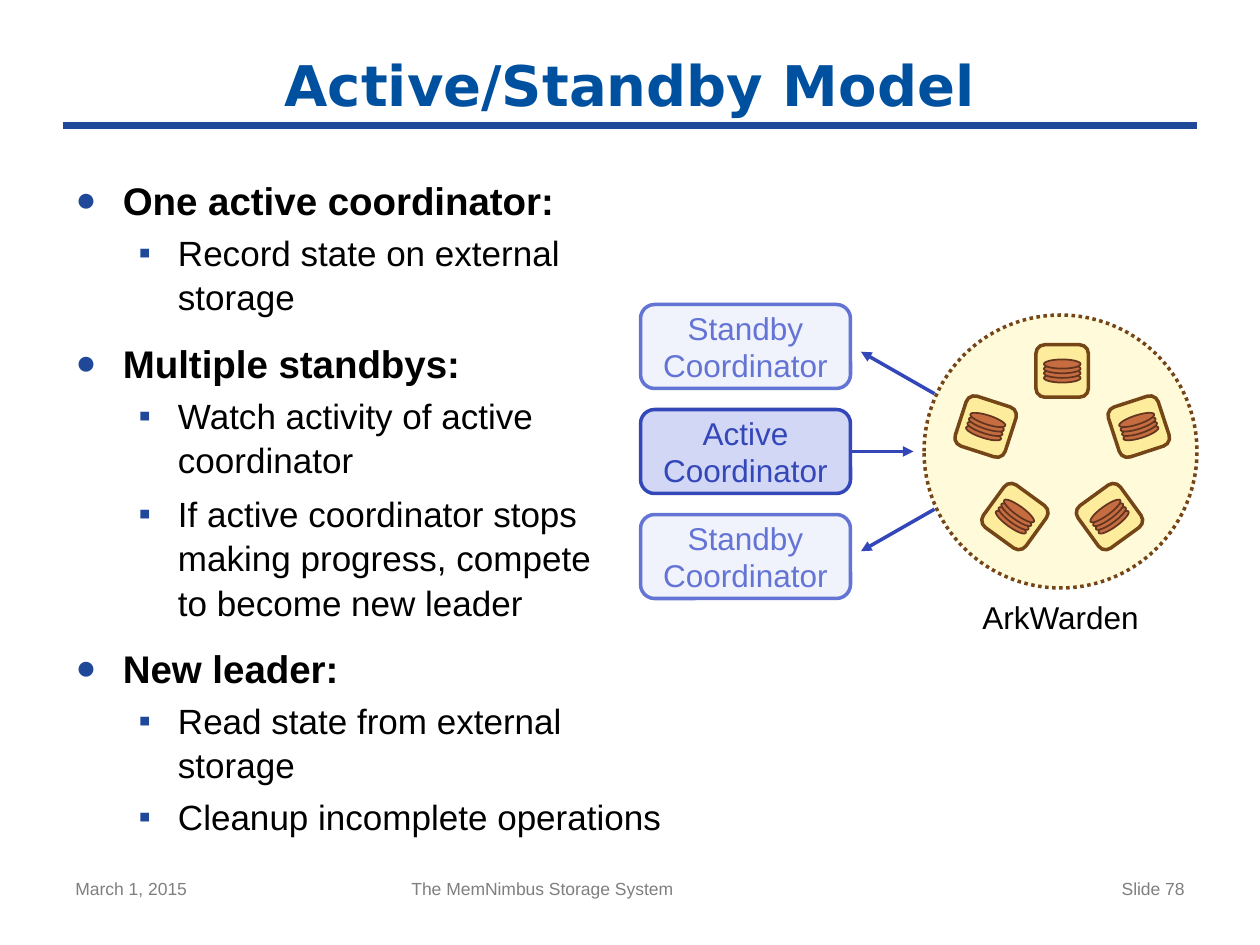
from math import cos, radians, sin

from lxml.etree import SubElement
from pptx import Presentation
from pptx.dml.color import RGBColor
from pptx.enum.dml import MSO_LINE
from pptx.enum.shapes import MSO_CONNECTOR, MSO_SHAPE
from pptx.enum.text import MSO_ANCHOR, MSO_AUTO_SIZE, PP_ALIGN
from pptx.oxml.ns import qn
from pptx.util import Pt

NAVY, BLUE, BROWN = "1F4899", "3447B8", "744516"
STANDBY = ("Standby", "F0F2FC", "6474D4")
ACTIVE = ("Active", "D2D7F6", BLUE)

OUTLINE = [
    ("One active coordinator:", ["Record state on external storage"]),
    ("Multiple standbys:", [
        "Watch activity of active coordinator",
        "If active coordinator stops making progress, compete\nto become new leader",
    ]),
    ("New leader:", ["Read state from external storage", "Cleanup incomplete operations"]),
]


def color(value):
    return RGBColor.from_string(value)


def place(shape, left, top, width, height):
    shape.left, shape.top = Pt(left), Pt(top)
    shape.width, shape.height = Pt(width), Pt(height)


def write(para, text, size, ink, bold=False, font="Arial"):
    for index, line in enumerate(text.split("\n")):
        if index:
            para.add_line_break()
        span = para.add_run()
        span.text = line
        span.font.size, span.font.name, span.font.bold = Pt(size), font, bold
        span.font.color.rgb = color(ink)


def add_solid(parent, kind, box, fill, line, weight):
    shape = parent.shapes.add_shape(kind, *map(Pt, box))
    shape.shadow.inherit = False
    shape.fill.solid()
    shape.fill.fore_color.rgb = color(fill)
    shape.line.color.rgb = color(line)
    shape.line.width = Pt(weight)
    return shape


def add_line(page, start, end, ink, weight, arrow=False):
    line = page.shapes.add_connector(MSO_CONNECTOR.STRAIGHT, *map(Pt, start + end))
    line.line.color.rgb = color(ink)
    line.line.width = Pt(weight)
    if arrow:
        SubElement(line.line._get_or_add_ln(), qn("a:tailEnd"), type="triangle")
    SubElement(line._element.spPr, qn("a:effectLst"))
    return line


def add_label(page, box, text, size, ink, align=PP_ALIGN.LEFT, inset=None):
    label = page.shapes.add_textbox(*map(Pt, box))
    frame = label.text_frame
    frame.word_wrap = True
    if inset is not None:
        frame.margin_left = frame.margin_right = Pt(inset)
        frame.margin_top = frame.margin_bottom = Pt(inset)
    para = frame.paragraphs[0]
    para.alignment = align
    write(para, text, size, ink)


def add_title(page, left, top, width, height):
    title = page.shapes.title
    place(title, left, top, width, height)
    frame = title.text_frame
    frame.auto_size = MSO_AUTO_SIZE.NONE
    frame.vertical_anchor = MSO_ANCHOR.MIDDLE
    para = frame.paragraphs[0]
    para.alignment = PP_ALIGN.CENTER
    write(para, "Active/Standby Model", 32, "0050A0", True, "DejaVu Sans")
    rule = top + height - 0.5
    add_line(page, (left, rule), (left + width, rule), NAVY, 4)


def format_bullet(para, level, indent, hanging, before, mark, scale):
    para.level = level
    para.line_spacing = 1.05
    props = para._p.get_or_add_pPr()
    props.set("marL", str(Pt(indent)))
    props.set("indent", str(-Pt(hanging)))
    spacing = SubElement(props, qn("a:spcBef"))
    SubElement(spacing, qn("a:spcPct"), val=str(before * 1000))
    tint = SubElement(props, qn("a:buClr"))
    SubElement(tint, qn("a:srgbClr"), val=NAVY)
    SubElement(props, qn("a:buSzPct"), val=str(scale * 1000))
    SubElement(props, qn("a:buFont"), typeface="Arial")
    SubElement(props, qn("a:buChar"), char=mark)


def add_outline(page, left, top, width, height):
    body = page.placeholders[1]
    place(body, left, top, width, height)
    frame = body.text_frame
    frame.auto_size = MSO_AUTO_SIZE.NONE
    for index, (heading, points) in enumerate(OUTLINE):
        para = frame.add_paragraph() if index else frame.paragraphs[0]
        format_bullet(para, 0, 27, 27, 50, "●", 90)
        write(para, heading, 22, "000000", True)
        for point in points:
            para = frame.add_paragraph()
            format_bullet(para, 1, 58.5, 22.5, 20, "▪", 100)
            write(para, point, 20, "000000")


def add_coordinators(page, left, top, width, height, pitch):
    boxes = []
    for row, (role, fill, ink) in enumerate((STANDBY, ACTIVE, STANDBY)):
        box = add_solid(page, MSO_SHAPE.ROUNDED_RECTANGLE,
                        (left, top + row * pitch, width, height), fill, ink, 2)
        frame = box.text_frame
        frame.vertical_anchor = MSO_ANCHOR.MIDDLE
        para = frame.paragraphs[0]
        para.alignment = PP_ALIGN.CENTER
        write(para, role + "\nCoordinator", 18, ink)
        boxes.append(box)
    return boxes


def add_server(page, center_x, center_y, tilt):
    side, disk_width, disk_height, step = 30, 21, 5.25, 2.65
    server = page.shapes.add_group_shape()
    add_solid(server, MSO_SHAPE.ROUNDED_RECTANGLE,
              (center_x - side / 2, center_y - side / 2, side, side), "FEEC9D", BROWN, 2)
    # Disks stack upwards from the lowest
    for disk in range(4):
        middle = center_y + (1.5 - disk) * step
        add_solid(server, MSO_SHAPE.OVAL,
                  (center_x - disk_width / 2, middle - disk_height / 2, disk_width, disk_height),
                  "C56D41", "64351E", 1)
    server.rotation = tilt


def add_cluster(page, left, top, size):
    circle = add_solid(page, MSO_SHAPE.OVAL, (left, top, size, size), "FFFAD9", BROWN, 2)
    circle.line.dash_style = MSO_LINE.ROUND_DOT
    center_x, center_y, radius, count = left + size / 2 + 1, top + size / 2, 46, 5
    for index in range(count):
        angle = index * 360 / count
        add_server(page, center_x + radius * sin(radians(angle)),
                   center_y - radius * cos(radians(angle)), angle - 90 * round(angle / 90))
    add_label(page, (left + 33, top + size + 6, 90, 21.6), "ArkWarden", 18, "000000",
              PP_ALIGN.CENTER, 0)


def add_arrows(page, active, middle):
    arrow = add_line(page, (486, middle), (522, middle), BLUE, 2, True)
    arrow.begin_connect(active, 3)
    for side in (-1, 1):
        add_line(page, (534, middle + side * 33), (492, middle + side * 57), BLUE, 2, True)


def add_footer(page, top, height):
    for left, width, text, align in (
        (36, 168, "March 1, 2015", PP_ALIGN.LEFT),
        (228, 270, "The MemNimbus Storage System", PP_ALIGN.LEFT),
        (516, 168, "Slide 78", PP_ALIGN.RIGHT),
    ):
        add_label(page, (left, top, width, height), text, 10, "7F7F7F", align)


def main():
    deck = Presentation()
    deck.slide_width, deck.slide_height = Pt(720), Pt(540)
    page = deck.slides.add_slide(deck.slide_layouts[1])
    add_title(page, 36, 24, 648, 48)
    add_outline(page, 36, 96, 360, 402)
    add_cluster(page, 528, 180, 156)
    boxes = add_coordinators(page, 366, 174, 120, 48, 60)
    add_arrows(page, boxes[1], 258)
    add_footer(page, 498, 31)
    deck.save("out.pptx")


if __name__ == "__main__":
    main()
